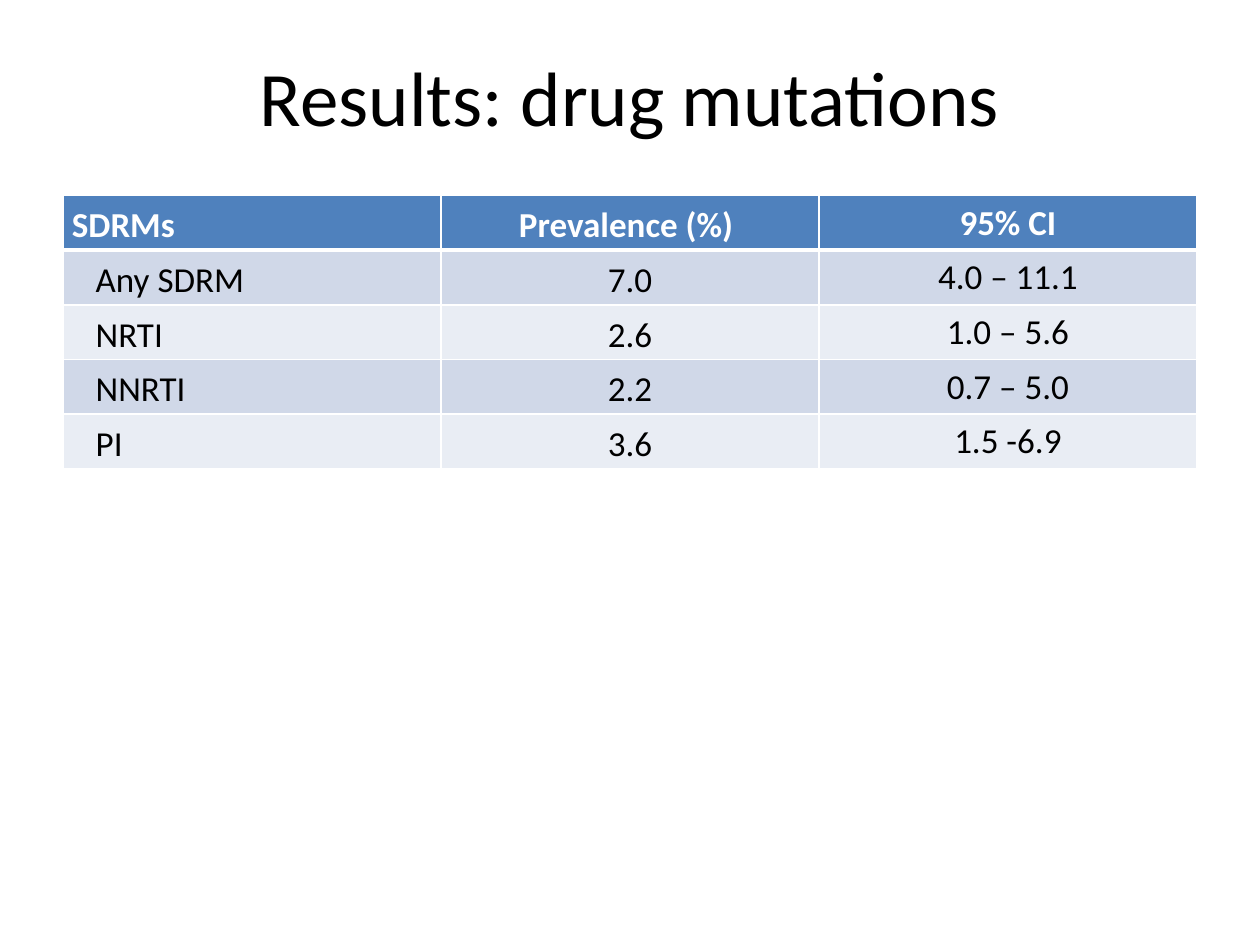
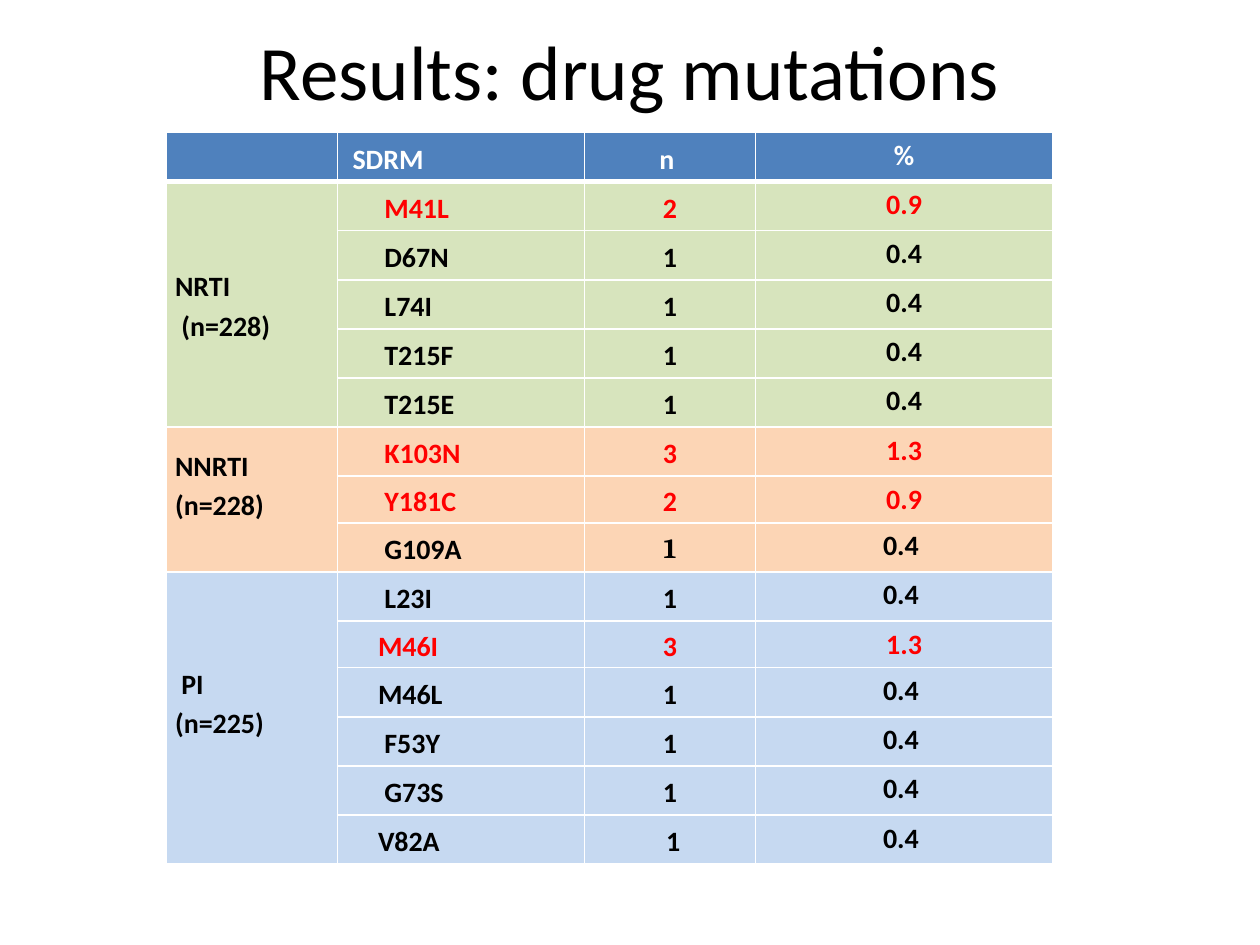
import pptx
import pptx.util
import pptx.dml.color
import pptx.enum.text
import pptx.oxml
import pptx.oxml.ns
import lxml.etree

Cm = pptx.util.Cm
Pt = pptx.util.Pt
ALIGN = pptx.enum.text.PP_ALIGN
MIDDLE = pptx.enum.text.MSO_ANCHOR.MIDDLE
TOP = pptx.enum.text.MSO_ANCHOR.TOP

WHITE, BLACK, RED = "FFFFFF", "000000", "FF0000"
HEADER, BAND_DARK, BAND_LIGHT = "4F81BD", "D0D8E8", "E9EDF4"
GREEN, ORANGE, BLUE = "D7E4BD", "FCD5B5", "C6D9F1"
TITLE = "Results: drug mutations"


def color(value):
    return pptx.dml.color.RGBColor.from_string(value)


def write(frame, text, size=20, ink=BLACK, bold=False, font="Calibri", align=ALIGN.LEFT, spacing=1.0):
    for number, line in enumerate(text.split("\n")):
        para = frame.add_paragraph() if number else frame.paragraphs[0]
        para.alignment = align
        para.line_spacing = spacing
        span = para.add_run()
        span.text = line
        span.font.size = Pt(size)
        span.font.bold = bold
        span.font.name = font
        span.font.color.rgb = color(ink)


prevalence_rows = [
    ["SDRMs", "Prevalence (%) ", "95% CI"],
    ["Any SDRM", "7.0", "4.0 – 11.1"],
    ["NRTI", "2.6", "1.0 – 5.6"],
    ["NNRTI", "2.2", "0.7 – 5.0"],
    ["PI", "3.6", "1.5 -6.9"],
]

mutation_rows = [
    ["", " SDRM", "n ", "%"],
    ["NRTI\n (n=228)", "M41L", "2", "0.9"],
    ["", "D67N", "1", "0.4"],
    ["", "L74I", "1", "0.4"],
    ["", "T215F", "1", "0.4"],
    ["", "T215E", "1", "0.4"],
    ["NNRTI\n(n=228)", "K103N", "3", "1.3"],
    ["", "Y181C", "2", "0.9"],
    ["", "G109A", "1", "0.4 "],
    [" PI\n(n=225)", "L23I", "1", "0.4 "],
    ["", "M46I", "3", "1.3"],
    ["", "M46L", "1", "0.4 "],
    ["", "F53Y", "1", "0.4 "],
    ["", "G73S", "1", "0.4 "],
    ["", "V82A", " 1", "0.4 "],
]

highlighted = {"M41L", "K103N", "Y181C", "M46I"}
less_indented = {"M46I", "M46L", "V82A"}
low_rows = {"Y181C", "M46I"}

tables = [
    dict(
        title_top=0.76, title_height=2.36, left=1.27, top=3.94,
        widths=[7.62] * 3, row_height=1.1, rows=prevalence_rows,
        fills=[HEADER] + [BAND_DARK, BAND_LIGHT] * 2,
        groups=[], size=20, body_bold=False, indent=0.48,
    ),
    dict(
        title_top=0.28, title_height=2.26, left=3.35, top=2.67,
        widths=[3.45, 4.98, 3.45, 5.99], row_height=0.99, rows=mutation_rows,
        fills=[HEADER] + [GREEN] * 5 + [ORANGE] * 3 + [BLUE] * 6,
        groups=[(1, 5, 0), (6, 8, 0.64), (9, 14, 0.64)], size=16, body_bold=True, indent=0.77,
    ),
]

deck = pptx.Presentation()
deck.slide_width = Cm(25.4)
deck.slide_height = Cm(19.05)

for table in tables:
    page = deck.slides.add_slide(deck.slide_layouts[6])
    box = page.shapes.add_textbox(Cm(1.27), Cm(table["title_top"]), Cm(22.86), Cm(table["title_height"]))
    box.text_frame.word_wrap = True
    box.text_frame.vertical_anchor = MIDDLE
    write(box.text_frame, TITLE, size=44, align=ALIGN.CENTER)

    rows, widths = table["rows"], table["widths"]
    grid = page.shapes.add_table(
        len(rows), len(widths), Cm(table["left"]), Cm(table["top"]),
        Cm(sum(widths)), Cm(table["row_height"] * len(rows)),
    ).table
    for column, width in zip(grid.columns, widths):
        column.width = Cm(width)
    last = len(widths) - 1
    name_column = last - 2

    for row_number, (row, fill) in enumerate(zip(rows, table["fills"])):
        is_header = row_number == 0
        name = row[name_column]
        grid.rows[row_number].height = Cm(0.94 if name in low_rows else table["row_height"])
        for column_number, text in enumerate(row):
            cell = grid.cell(row_number, column_number)
            is_last = column_number == last
            cell.vertical_anchor = TOP if is_last else MIDDLE
            if not is_last:
                cell.margin_left = cell.margin_right = Cm(0.18)
                cell.margin_top = cell.margin_bottom = 0
            if column_number == name_column and not is_header:
                indent = 0.64 if name in less_indented else table["indent"]
                cell.margin_left = Cm(0.18 + indent)
            ink = BLACK
            if is_header:
                ink = WHITE
            elif name in highlighted and column_number >= name_column:
                ink = RED
            if text:
                write(
                    cell.text_frame, text, size=table["size"], ink=ink,
                    bold=is_header or table["body_bold"],
                    font="Cambria" if name == "G109A" and column_number == 2 else "Calibri",
                    align=ALIGN.CENTER if column_number > name_column else ALIGN.LEFT,
                    spacing=1.0 if is_last else 1.15,
                )
            properties = cell._tc.get_or_add_tcPr()
            for side in ("lnL", "lnR", "lnT", "lnB"):
                heavy = (row_number, side) in {(0, "lnB"), (1, "lnT")}
                line = lxml.etree.SubElement(properties, pptx.oxml.ns.qn("a:" + side), w=str(Pt(3 if heavy else 1)))
                solid = lxml.etree.SubElement(line, pptx.oxml.ns.qn("a:solidFill"))
                lxml.etree.SubElement(solid, pptx.oxml.ns.qn("a:srgbClr"), val=WHITE)
            cell.fill.solid()
            cell.fill.fore_color.rgb = color(fill)

    for first, final, bottom in table["groups"]:
        group = grid.cell(first, 0)
        group.margin_bottom = Cm(bottom)
        group.merge(grid.cell(final, 0))

deck.save("out.pptx")
